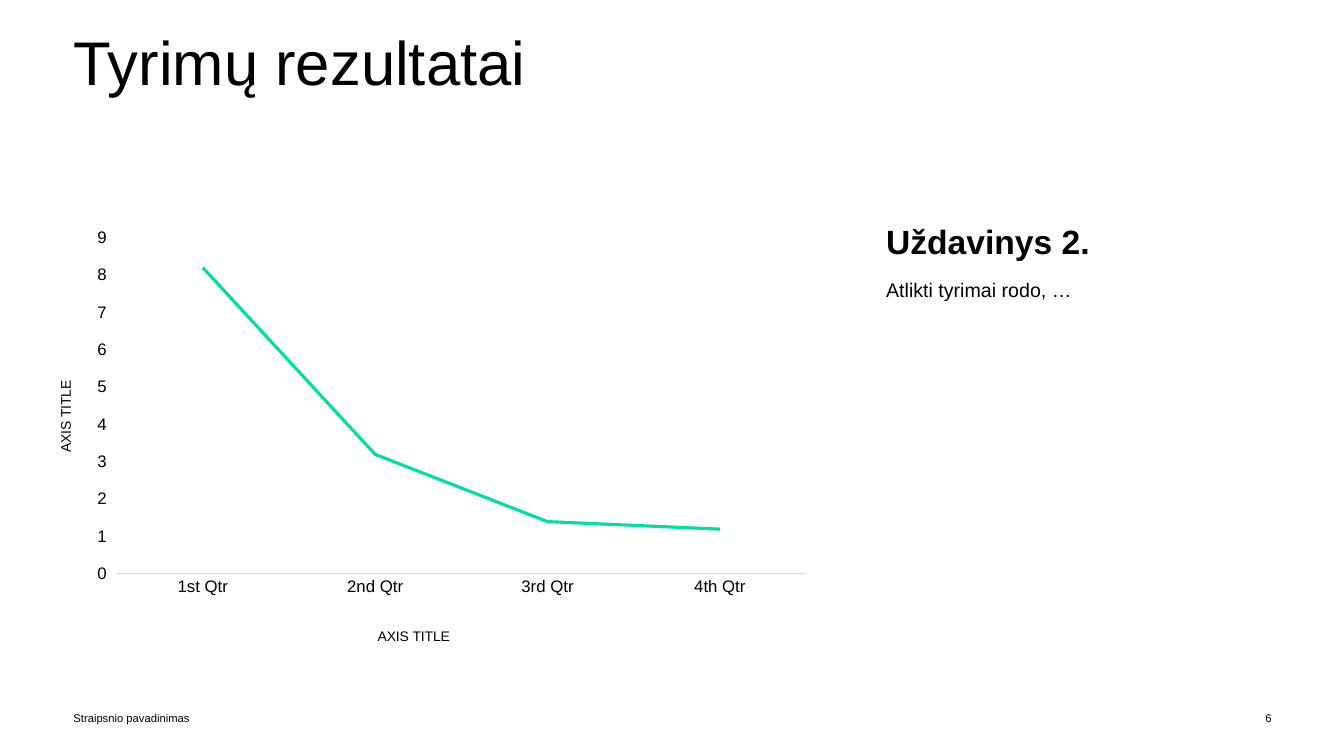
from dataclasses import dataclass

from lxml import etree
from pptx import Presentation
from pptx.chart.data import CategoryChartData
from pptx.dml.color import RGBColor
from pptx.enum.chart import XL_CHART_TYPE as CT, XL_MARKER_STYLE as MS, XL_TICK_MARK as TM
from pptx.enum.text import MSO_ANCHOR as MA, PP_ALIGN as PA
from pptx.oxml import parse_xml
from pptx.oxml.ns import nsdecls
from pptx.util import Inches, Pt


@dataclass(frozen=True)
class Theme:
    font: str = "Arial"
    ink: RGBColor = RGBColor(0, 0, 0)
    accent: RGBColor = RGBColor(0x00, 0xDD, 0xA5)
    rule: RGBColor = RGBColor(0xD9, 0xD9, 0xD9)
    title: int = 44
    heading: int = 24
    body: int = 14
    tick: int = 12
    axis_title: int = 10
    footer: int = 8


class Deck:
    """Builds slides in one theme."""

    def __init__(self, theme):
        self.theme = theme
        self.prs = Presentation()
        self.prs.slide_width = Inches(13.33)
        self.prs.slide_height = Inches(7.5)

    def set_font(self, font, size, bold=False):
        font.name = self.theme.font
        font.size = Pt(size)
        font.bold = bold
        font.color.rgb = self.theme.ink

    def add_slide(self, title, box):
        self.slide = self.prs.slides.add_slide(self.prs.slide_layouts[5])
        sp = self.slide.shapes.title
        sp.left, sp.top, sp.width, sp.height = map(Inches, box)
        self.fill_text(sp.text_frame, [(title, self.theme.title, False, 0.9)])

    def fill_text(self, tf, lines, align=PA.LEFT, anchor=MA.TOP):
        tf.word_wrap = True
        tf.vertical_anchor = anchor
        for i, (text, size, bold, spacing) in enumerate(lines):
            p = tf.add_paragraph() if i else tf.paragraphs[0]
            p.text = text
            p.alignment = align
            p.line_spacing = spacing
            p.space_before = Pt(10 if i else 0)
            self.set_font(p.font, size, bold)

    def add_text(self, box, lines, **options):
        sp = self.slide.shapes.add_textbox(*map(Inches, box))
        self.fill_text(sp.text_frame, lines, **options)

    def add_footer(self, left, text, align):
        self.add_text((left, 6.76, 2.62, 0.74), [(text, self.theme.footer, False, 0.9)],
                      align=align, anchor=MA.MIDDLE)

    def layout(self, x, y, size=None):
        values = {"xMode": "edge", "yMode": "edge", "x": x, "y": y}
        if size:
            values = {"layoutTarget": "inner", **values, "w": size[0], "h": size[1]}
        items = "".join(f'<c:{k} val="{v}"/>' for k, v in values.items())
        return parse_xml(f'<c:layout {nsdecls("c")}><c:manualLayout>{items}'
                         '</c:manualLayout></c:layout>')

    def place(self, element, layout):
        for old in element.findall(layout.tag):
            element.remove(old)
        text = element.find(etree.QName(layout, "tx").text)
        element.insert(0 if text is None else 1, layout)

    def format_axis(self, axis, title, x, y):
        axis.has_major_gridlines = False
        axis.minor_tick_mark = TM.NONE
        self.set_font(axis.tick_labels.font, self.theme.tick)
        p = axis.axis_title.text_frame.paragraphs[0]
        p.text = title
        self.set_font(p.font, self.theme.axis_title)
        self.place(axis.axis_title._element, self.layout(x, y))

    def add_line_chart(self, box, categories, name, values):
        data = CategoryChartData()
        data.categories = categories
        data.add_series(name, values)
        frame = self.slide.shapes.add_chart(CT.LINE, *map(Inches, box), data)
        chart = frame.chart
        chart.has_title = False
        chart.has_legend = False
        self.set_font(chart.font, self.theme.axis_title)
        plot = chart.plots[0]
        plot.vary_by_categories = False
        series = plot.series[0]
        series.smooth = False
        series.marker.style = MS.NONE
        series.format.line.color.rgb = self.theme.accent
        series.format.line.width = Pt(2.25)
        cat, val = chart.category_axis, chart.value_axis
        self.format_axis(cat, "AXIS TITLE", 0.43, 0.95)
        self.format_axis(val, "AXIS TITLE", 0.02, 0.37)
        cat.major_tick_mark = TM.NONE
        cat.format.line.color.rgb = self.theme.rule
        cat.format.line.width = Pt(0.75)
        val.major_tick_mark = TM.OUTSIDE
        val.format.line.fill.background()
        val.minimum_scale, val.maximum_scale, val.major_unit = 0, 9, 1
        area = chart._chartSpace.chart.plotArea
        self.place(area, self.layout(0.1, 0.04, (0.88, 0.79)))


def main():
    theme = Theme()
    deck = Deck(theme)
    deck.add_slide("Tyrimų rezultatai", (0.63, 0.27, 11.79, 1.45))
    deck.add_footer(0.63, "Straipsnio pavadinimas", PA.LEFT)
    deck.add_footer(10.09, "6", PA.RIGHT)
    deck.add_line_chart((0.38, 2.19, 7.77, 4.25),
                        ["1st Qtr", "2nd Qtr", "3rd Qtr", "4th Qtr"],
                        "Series 1", [8.2, 3.2, 1.4, 1.2])
    deck.add_text((8.69, 2.19, 3.38, 2.64),
                  [("Uždavinys 2.", theme.heading, True, 0.9),
                   ("Atlikti tyrimai rodo, …", theme.body, False, 1.1)])
    deck.prs.save("out.pptx")


if __name__ == "__main__":
    main()
